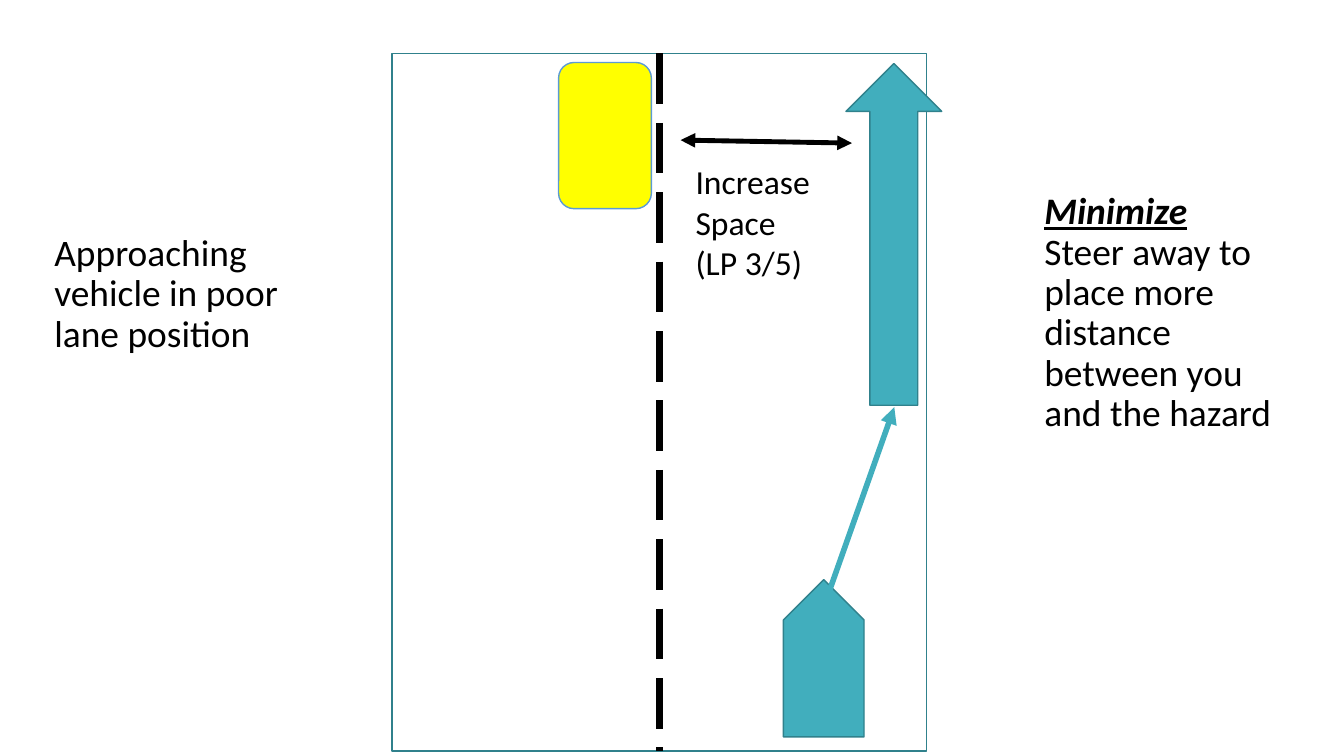
"""Build a slide showing how to steer away from an approaching vehicle."""
from lxml import etree
from pptx import Presentation
from pptx.dml.color import RGBColor
from pptx.enum import dml, shapes, text
from pptx.oxml import ns
from pptx.util import Inches, Pt

COLORS = {
    "black": "000000",
    "white": "FFFFFF",
    "yellow": "FFFF00",
    "teal": "41AEBD",
    "dark teal": "30818C",
    "blue": "5B9BD5",
}
FONT = "Calibri"


def color(name):
    """Return the named colour."""
    return RGBColor.from_string(COLORS[name])


def add_block(page, kind, left, top, width, height, fill, line, rotation=0):
    """Add a filled, outlined preset shape."""
    block = page.shapes.add_shape(
        kind, Inches(left), Inches(top), Inches(width), Inches(height))
    block.shadow.inherit = False
    block.rotation = rotation
    block.fill.solid()
    block.fill.fore_color.rgb = color(fill)
    block.line.color.rgb = color(line)
    block.line.width = Pt(1)
    return block


def add_line(page, start, end, line, width, dash=None, arrows=()):
    """Add a straight line with an optional dash and arrowheads."""
    connector = page.shapes.add_connector(
        shapes.MSO_CONNECTOR.STRAIGHT,
        *(Inches(value) for value in (*start, *end)))
    connector.line.color.rgb = color(line)
    connector.line.width = Pt(width)
    if dash:
        connector.line.dash_style = dash
    outline = connector.line._get_or_add_ln()
    for arrow in arrows:
        etree.SubElement(outline, ns.qn(f"a:{arrow}"), type="triangle")
    etree.SubElement(connector._element.spPr, ns.qn("a:effectLst"))
    return connector


def add_text(page, content, left, top, width, height, size=26.7, spacing=0.9,
             anchor=text.MSO_ANCHOR.TOP, heading=False):
    """Add a text box, one paragraph per line, with an optional heading."""
    box = page.shapes.add_textbox(
        Inches(left), Inches(top), Inches(width), Inches(height))
    frame = box.text_frame
    frame.word_wrap = True
    frame.vertical_anchor = anchor
    frame.text = content
    for index, para in enumerate(frame.paragraphs):
        para.line_spacing = spacing
        for span in para.runs:
            span.font.name = FONT
            span.font.size = Pt(size)
            span.font.color.rgb = color("black")
            if heading and index == 0:
                span.font.bold = span.font.italic = span.font.underline = True
    return box


def add_road(page):
    """Add the road, its centre line and the vehicles."""
    kinds = shapes.MSO_SHAPE
    add_block(page, kinds.RECTANGLE, 3.89, 0.53, 5.3, 6.92,
              "white", "dark teal")
    add_line(page, (6.54, 0.53), (6.54, 7.45), "black", 4.5,
             dash=dml.MSO_LINE.LONG_DASH)
    add_block(page, kinds.ROUNDED_RECTANGLE, 5.54, 0.62, 0.92, 1.45,
              "yellow", "blue")
    add_block(page, kinds.PENTAGON, 7.39, 6.13, 1.56, 0.8,
              "teal", "dark teal", rotation=270)
    add_block(page, kinds.UP_ARROW, 8.39, 0.63, 0.95, 3.39,
              "teal", "dark teal")


def main():
    """Create and save the deck."""
    deck = Presentation()
    deck.slide_width, deck.slide_height = Inches(13.33), Inches(7.5)
    page = deck.slides.add_slide(deck.slide_layouts[6])
    add_text(page, "Approaching vehicle in poor lane position",
             0.44, 2.31, 2.75, 1.23, anchor=text.MSO_ANCHOR.MIDDLE)
    add_text(page, "Minimize\nSteer away to place more distance between you "
             "and the hazard", 10.26, 1.86, 2.56, 1.41, heading=True)
    add_road(page)
    add_line(page, (8.22, 5.88), (8.87, 4.04), "teal", 4, arrows=["tailEnd"])
    add_line(page, (6.75, 1.39), (8.45, 1.42), "black", 3.5,
             arrows=["headEnd", "tailEnd"])
    add_text(page, "Increase Space\n(LP 3/5)", 6.8, 1.55, 1.88, 1.31,
             size=24, spacing=1.0)
    deck.save("out.pptx")


if __name__ == "__main__":
    main()
